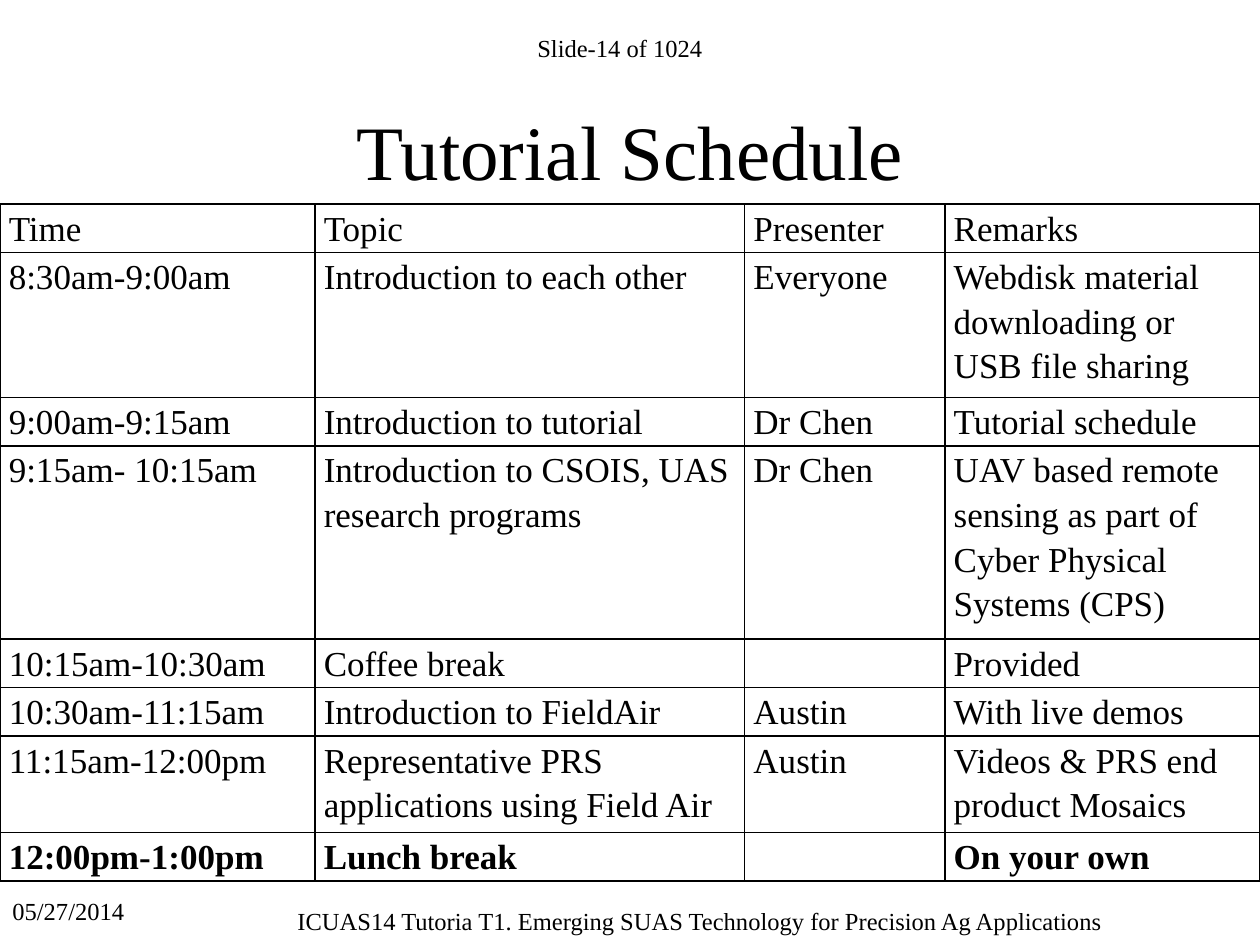
"""Build the tutorial schedule slide."""
import lxml.etree
import pptx
import pptx.dml.color
import pptx.enum.text
import pptx.oxml.ns
import pptx.util

Inches = pptx.util.Inches
Pt = pptx.util.Pt
ALIGN = pptx.enum.text.PP_ALIGN
ANCHOR = pptx.enum.text.MSO_ANCHOR
BLACK = pptx.dml.color.RGBColor(0, 0, 0)
SERIF = "Times New Roman"

COLUMN_WIDTHS = [2.5, 3.41, 1.59, 2.5]
ROW_HEIGHTS = [0.38, 1.13, 0.38, 1.51, 0.38, 0.38, 0.75, 0.38]
SCHEDULE = [
    ["Time", "Topic", "Presenter", "Remarks"],
    ["8:30am-9:00am", "Introduction to each other", "Everyone",
     "Webdisk material downloading or USB file sharing"],
    ["9:00am-9:15am", "Introduction to tutorial", "Dr Chen", "Tutorial schedule"],
    ["9:15am- 10:15am", "Introduction to CSOIS, UAS research programs", "Dr Chen",
     "UAV based remote sensing as part of Cyber Physical Systems (CPS)"],
    ["10:15am-10:30am", "Coffee break", "", "Provided"],
    ["10:30am-11:15am", "Introduction to FieldAir", "Austin", "With live demos"],
    ["11:15am-12:00pm", "Representative PRS applications using Field Air", "Austin",
     "Videos & PRS end product Mosaics"],
    ["12:00pm-1:00pm", "Lunch break", "", "On your own"],
]


def set_attributes(target, values):
    """Set each named attribute of the target."""
    for name, value in values.items():
        setattr(target, name, value)


def write_run(paragraph, text, size, bold=None):
    """Add a formatted run to the paragraph."""
    run = paragraph.add_run()
    run.text = text
    set_attributes(run.font, {"name": SERIF, "size": Pt(size), "bold": bold})
    run.font.color.rgb = BLACK


def add_text(slide, text, box, size, align=ALIGN.LEFT, anchor=ANCHOR.TOP):
    """Add a one-paragraph text box."""
    shape = slide.shapes.add_textbox(*map(Inches, box))
    set_attributes(shape.text_frame, {"word_wrap": True, "vertical_anchor": anchor})
    paragraph = shape.text_frame.paragraphs[0]
    paragraph.alignment = align
    write_run(paragraph, text, size)


def add_borders(cell):
    """Draw a thin black line on every side of the cell."""
    properties = cell._tc.get_or_add_tcPr()
    for side in ("lnL", "lnR", "lnT", "lnB"):
        line = lxml.etree.SubElement(properties, pptx.oxml.ns.qn(f"a:{side}"), w=str(Pt(1)))
        fill = lxml.etree.SubElement(line, pptx.oxml.ns.qn("a:solidFill"))
        lxml.etree.SubElement(fill, pptx.oxml.ns.qn("a:srgbClr"), val=str(BLACK))


def fill_cell(cell, text, bold):
    """Format one schedule cell and write its text."""
    add_borders(cell)
    cell.fill.background()
    set_attributes(cell, {"margin_left": Inches(0.07), "margin_right": Inches(0.07),
                          "margin_top": 0, "margin_bottom": 0})
    if text:
        paragraph = cell.text_frame.paragraphs[0]
        paragraph.line_spacing = 1.15
        write_run(paragraph, text, 20, bold)


def add_schedule(slide):
    """Add the schedule table with a bold last row."""
    frame = slide.shapes.add_table(
        len(SCHEDULE), len(COLUMN_WIDTHS), Inches(0), Inches(1.62),
        Inches(sum(COLUMN_WIDTHS)), Inches(sum(ROW_HEIGHTS)))
    table = frame.table
    set_attributes(table, {"first_row": False, "horz_banding": False})
    for column, width in zip(table.columns, COLUMN_WIDTHS):
        column.width = Inches(width)
    for index, (row, height, texts) in enumerate(zip(table.rows, ROW_HEIGHTS, SCHEDULE)):
        row.height = Inches(height)
        for cell, text in zip(row.cells, texts):
            fill_cell(cell, text, index == len(SCHEDULE) - 1)


def main():
    """Create the presentation and save it."""
    presentation = pptx.Presentation()
    set_attributes(presentation, {"slide_width": Inches(10), "slide_height": Inches(7.5)})
    slide = presentation.slides.add_slide(presentation.slide_layouts[6])
    add_text(slide, "Tutorial Schedule", (0, 0.68, 10, 1.02), 44, ALIGN.CENTER, ANCHOR.MIDDLE)
    add_text(slide, "05/27/2014", (0, 7.06, 2.08, 0.44), 14)
    add_text(slide, "ICUAS14 Tutoria T1. Emerging SUAS Technology for Precision Ag Applications",
             (2.09, 7.14, 6.93, 0.36), 14, ALIGN.CENTER)
    add_text(slide, "Slide-14 of 1024", (3.66, 0.21, 2.52, 0.47), 14, ALIGN.CENTER)
    add_schedule(slide)
    presentation.save("out.pptx")


if __name__ == "__main__":
    main()
